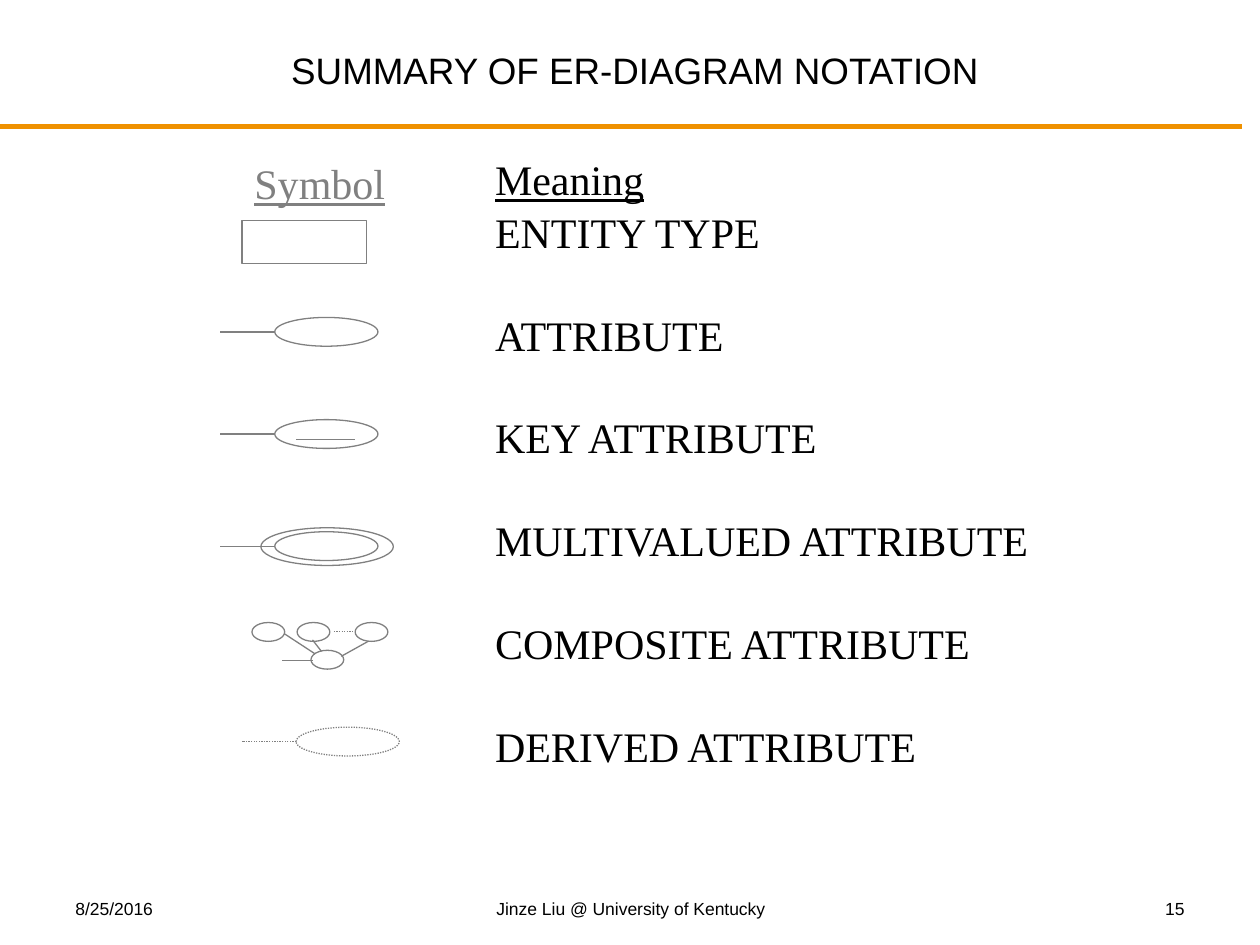
"""Build a slide that summarises ER-diagram notation."""
from lxml import etree
from pptx import Presentation
from pptx.dml.color import RGBColor
from pptx.enum.dml import MSO_LINE
from pptx.enum.shapes import MSO_CONNECTOR, MSO_SHAPE
from pptx.enum.text import MSO_ANCHOR, PP_ALIGN
from pptx.oxml.ns import qn
from pptx.util import Cm, Pt

LEFT, CENTER, RIGHT = PP_ALIGN.LEFT, PP_ALIGN.CENTER, PP_ALIGN.RIGHT
TOP, MIDDLE = MSO_ANCHOR.TOP, MSO_ANCHOR.MIDDLE
RECTANGLE, OVAL = MSO_SHAPE.RECTANGLE, MSO_SHAPE.OVAL
STRAIGHT = MSO_CONNECTOR.STRAIGHT
SOLID, DOTTED = MSO_LINE.SOLID, MSO_LINE.ROUND_DOT
BLACK, GRAY, ORANGE = "000000", "808080", "EF9100"
SANS, SERIF = "Arial", "Times New Roman"


def color(hex_string):
    """Turn a hex string into a colour."""
    return RGBColor.from_string(hex_string)


presentation = Presentation()
presentation.slide_width, presentation.slide_height = Cm(25.4), Cm(19.05)
slide = presentation.slides.add_slide(presentation.slide_layouts[6])

# left, top, width, height, vertical inset, wrap, anchor, alignment, font, size, color,
texts = [
    ((0.2, 0.97, 25.2, 1.02), (0, 0.13), True, MIDDLE, CENTER, SANS, 21, BLACK,
     [("SUMMARY OF ER-DIAGRAM NOTATION", False, 0)]),
    ((4.88, 3.18, 3.15, 1.02), (0, 0), False, TOP, LEFT, SERIF, 24, GRAY,
     [("Symbol", True, 0)]),
    ((9.73, 2.97, 12.27, 12.42), (0.13, 0.13), True, TOP, LEFT, SERIF, 24, BLACK,
     [("Meaning", True, 1.2), ("ENTITY TYPE", False, 1.2)]
     + [(meaning + "ATTRIBUTE", False, 30)
        for meaning in ("", "KEY ", "MULTIVALUED ", "COMPOSITE ", "DERIVED ")]),
    ((1.27, 17.98, 5.92, 0.64), (0.13, 0.13), True, TOP, LEFT, SANS, 10, BLACK,
     [("8/25/2016", False, 0)]),
    ((8.69, 17.98, 8.05, 0.64), (0.13, 0.13), True, TOP, CENTER, SANS, 10, BLACK,
     [("Jinze Liu @ University of Kentucky", False, 0)]),
    ((18.21, 17.98, 5.92, 0.64), (0.13, 0.13), True, TOP, RIGHT, SANS, 10, BLACK,
     [("15", False, 0)]),
]
for box, insets, wrap, anchor, alignment, font, size, ink, lines in texts:
    frame = slide.shapes.add_textbox(*map(Cm, box)).text_frame
    frame.word_wrap = wrap
    frame.vertical_anchor = anchor
    frame.margin_top, frame.margin_bottom = map(Cm, insets)
    for index, (words, underline, space) in enumerate(lines):
        paragraph = frame.add_paragraph() if index else frame.paragraphs[0]
        paragraph.alignment = alignment
        paragraph.space_before = Pt(space)
        run = paragraph.add_run()
        run.text = words
        run.font.name, run.font.size = font, Pt(size)
        run.font.underline = underline
        run.font.color.rgb = color(ink)

outlines = [
    (RECTANGLE, 4.88, 4.45, 2.51, 0.86, SOLID),
    (OVAL, 5.26, 10.64, 2.67, 0.76, SOLID),
]
connectors = [
    (0, 2.55, 25.04, 2.55, ORANGE, 3, SOLID),
    (5.97, 8.86, 7.16, 8.86, GRAY, 0.75, SOLID),
    (5.74, 12.78, 6.35, 13.18, GRAY, 0.75, SOLID),
    (6.3, 12.9, 6.48, 13.13, GRAY, 0.75, SOLID),
    (6.88, 13.23, 7.42, 12.93, GRAY, 0.75, SOLID),
    (6.73, 12.73, 7.14, 12.73, GRAY, 0.75, DOTTED),
    (6.3, 13.31, 5.69, 13.31, GRAY, 0.75, SOLID),
]

attributes = [(5.54, 6.4, SOLID), (5.54, 8.46, SOLID), (5.54, 10.72, SOLID),
              (5.97, 14.66, DOTTED)]
for left, top, dash in attributes:
    outlines.append((OVAL, left, top, 2.08, 0.58, dash))
    middle = top + 0.29
    connectors.append((left, middle, left - 1.1, middle, GRAY, 0.75, dash))

composite_ovals = [(5.08, 12.55), (5.99, 12.55), (7.16, 12.55), (6.27, 13.11)]
for left, top in composite_ovals:
    outlines.append((OVAL, left, top, 0.66, 0.38, SOLID))

for kind, left, top, width, height, dash in outlines:
    shape = slide.shapes.add_shape(kind, Cm(left), Cm(top), Cm(width), Cm(height))
    shape.shadow.inherit = False
    shape.fill.background()
    shape.line.color.rgb = color(GRAY)
    shape.line.width = Pt(0.75)
    shape.line.dash_style = dash

for *ends, ink, width, dash in connectors:
    connector = slide.shapes.add_connector(STRAIGHT, *map(Cm, ends))
    connector.line.color.rgb = color(ink)
    connector.line.width = Pt(width)
    connector.line.dash_style = dash
    etree.SubElement(connector.element.spPr, qn("a:effectLst"))

presentation.save("out.pptx")
